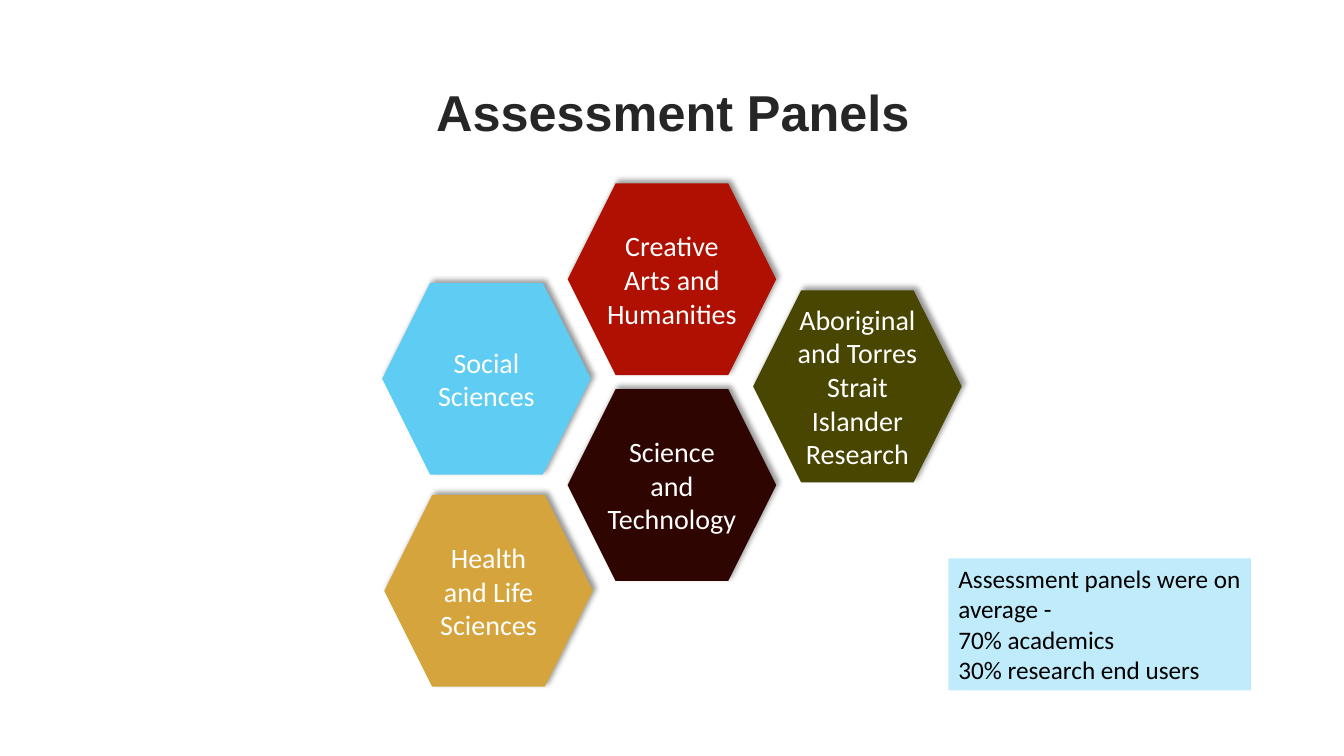
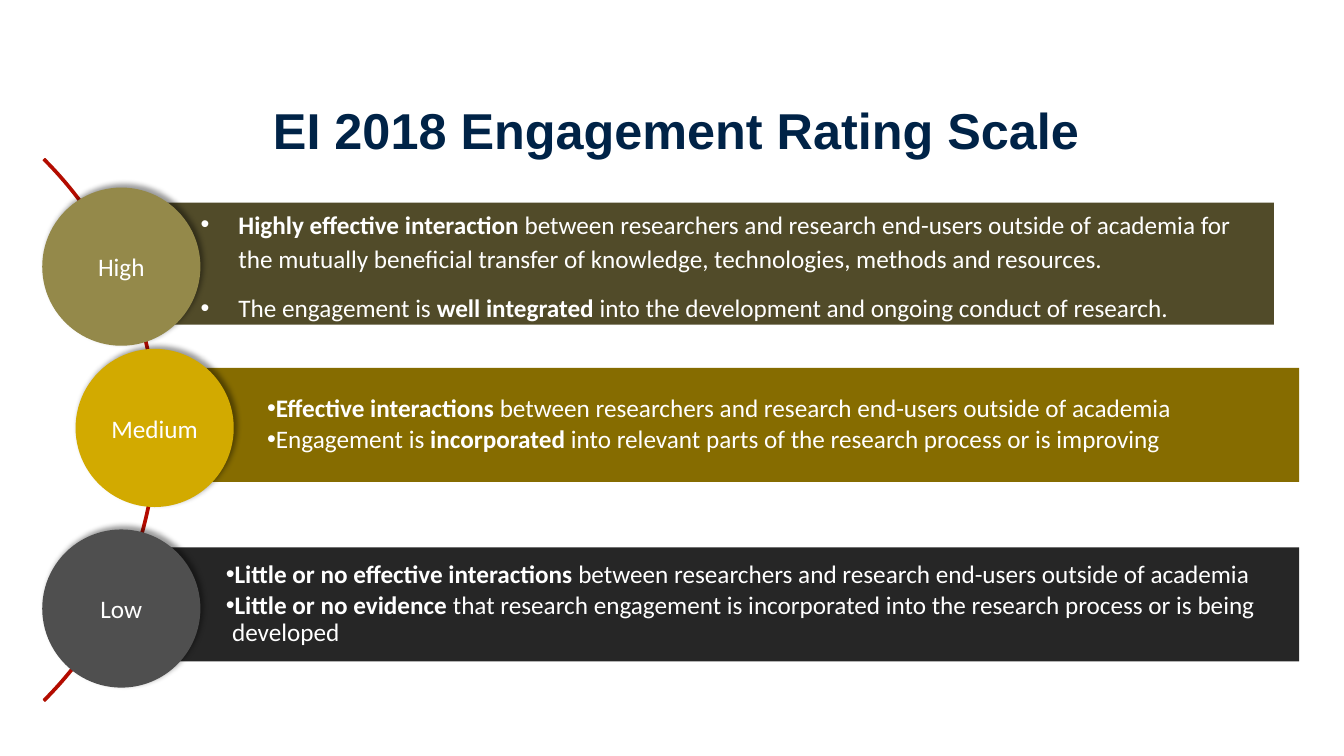
from lxml.etree import SubElement
from pptx import Presentation
from pptx.dml.color import RGBColor
from pptx.enum.shapes import MSO_SHAPE as Preset
from pptx.enum.text import MSO_ANCHOR as Anchor, MSO_AUTO_SIZE as AutoSize, PP_ALIGN as Align
from pptx.oxml.ns import qn
from pptx.util import Pt

WHITE = RGBColor(0xFF, 0xFF, 0xFF)
BLACK = RGBColor(0x00, 0x00, 0x00)
CHARCOAL = RGBColor(0x26, 0x26, 0x26)
NAVY = RGBColor(0x00, 0x23, 0x47)
SKY = RGBColor(0x5E, 0xCC, 0xF3)
PALE_SKY = RGBColor(0xBF, 0xEB, 0xFA)
MAROON = RGBColor(0x2E, 0x05, 0x00)
RED = RGBColor(0xB0, 0x10, 0x01)
BRIGHT_RED = RGBColor(0xC0, 0x00, 0x00)
SAND = RGBColor(0xD5, 0xA4, 0x3C)
OLIVE = RGBColor(0x49, 0x46, 0x01)
KHAKI = RGBColor(0x94, 0x89, 0x4A)
DARK_KHAKI = RGBColor(0x51, 0x4B, 0x29)
GOLD = RGBColor(0xD2, 0xAA, 0x00)
DARK_GOLD = RGBColor(0x86, 0x6C, 0x00)
GREY = RGBColor(0x4F, 0x4F, 0x4F)

TITLE_FONT, BODY_FONT = "Arial", "Calibri"
HEXAGON_SIZE = (149, 137)
CIRCLE_SIZE = (113, 113)

HEXAGONS = [
    ("Social Sciences", SKY, (273, 202), 7.2),
    ("Science and Technology", MAROON, (405.5, 278), 3),
    ("Creative Arts and Humanities", RED, (405.5, 131), 3),
    ("Health and Life Sciences", SAND, (274.5, 353.5), 7.2),
    ("Aboriginal and Torres Strait Islander Research", OLIVE, (538, 207.5), 7.2),
]

# Paragraph layout of a rating: hanging indent, line spacing, space after
LOOSE = (27, 1.15, 10)
TIGHT = (4.5, 0.9, 2.7)

# Label, circle colour and place, bar colour and bounds, layout, bullets of (text, bold)
RATINGS = [
    ("High", KHAKI, (30.2, 134), DARK_KHAKI, (78.5, 144.7, 831.5, 87.1), LOOSE, [
        [("Highly effective interaction ", True),
         ("between researchers and research end-users outside of academia for the mutually "
          "beneficial transfer of knowledge, technologies, methods and resources.", False)],
        [("The engagement is ", False), ("well integrated ", True),
         ("into the development and ongoing conduct of research.", False)],
    ]),
    ("Medium", GOLD, (54, 249.2), DARK_GOLD, (126, 262.8, 802, 81.4), TIGHT, [
        [("Effective interactions ", True),
         ("between researchers and research end-users outside of academia", False)],
        [("Engagement is ", False), ("incorporated", True),
         (" into relevant parts of the research process or is improving", False)],
    ]),
    ("Low", GREY, (30.2, 378.2), CHARCOAL, (96.5, 391, 831.5, 81.4), TIGHT, [
        [("Little or no effective interactions ", True),
         ("between researchers and research end-users outside of academia", False)],
        [("Little or no evidence ", True),
         ("that research engagement is incorporated into the research process or is being "
          "developed", False)],
    ]),
]


def add_span(para, text, size, color, bold=False, font=BODY_FONT):
    span = para.add_run()
    span.text = text
    span.font.name = font
    span.font.size = Pt(size)
    span.font.bold = bold
    span.font.color.rgb = color


def next_paragraph(frame, index):
    return frame.add_paragraph() if index else frame.paragraphs[0]


def add_filled(page, preset, bounds, fill):
    shape = page.shapes.add_shape(preset, *map(Pt, bounds))
    shape.shadow.inherit = False
    shape.fill.solid()
    shape.fill.fore_color.rgb = fill
    shape.line.fill.background()
    shape.text_frame.word_wrap = True
    return shape


def cast_shadow(shape):
    """Soft shadow towards the upper right."""
    effects = shape._element.spPr.find(qn("a:effectLst"))
    shadow = SubElement(effects, qn("a:outerShdw"), blurRad=str(Pt(4)), dist=str(Pt(3)),
                        dir="18900000", algn="bl", rotWithShape="0")
    color = SubElement(shadow, qn("a:srgbClr"), val=str(BLACK))
    SubElement(color, qn("a:alpha"), val="40000")


def add_title(page, text, bounds, color):
    box = page.shapes.add_textbox(*map(Pt, bounds))
    frame = box.text_frame
    frame.word_wrap = True
    frame.vertical_anchor = Anchor.MIDDLE
    para = frame.paragraphs[0]
    para.alignment = Align.CENTER
    para.line_spacing = 0.9
    add_span(para, text, 36, color, bold=True, font=TITLE_FONT)


def add_label(page, preset, bounds, fill, text, size, inset=7.2):
    """Shadowed shape with white centred text."""
    shape = add_filled(page, preset, bounds, fill)
    cast_shadow(shape)
    frame = shape.text_frame
    frame.margin_left = frame.margin_right = Pt(inset)
    frame.vertical_anchor = Anchor.MIDDLE
    para = frame.paragraphs[0]
    para.alignment = Align.CENTER
    add_span(para, text, size, WHITE)


def add_note(page, bounds, lines):
    frame = add_filled(page, Preset.RECTANGLE, bounds, PALE_SKY).text_frame
    frame.auto_size = AutoSize.SHAPE_TO_FIT_TEXT
    frame.vertical_anchor = Anchor.TOP
    for index, line in enumerate(lines):
        para = next_paragraph(frame, index)
        para.alignment = Align.LEFT
        add_span(para, line, 18, BLACK)


def set_bullet(para, indent):
    props = para._p.get_or_add_pPr()
    props.set("marL", str(Pt(indent)))
    props.set("indent", str(-Pt(indent)))
    SubElement(props, qn("a:buFont"), typeface=TITLE_FONT)
    SubElement(props, qn("a:buChar"), char="•")


def add_bar(page, bounds, fill, layout, bullets):
    indent, line_spacing, space_after = layout
    frame = add_filled(page, Preset.RECTANGLE, bounds, fill).text_frame
    frame.vertical_anchor = Anchor.MIDDLE
    frame.margin_left = Pt(64.8)
    frame.margin_right = frame.margin_top = frame.margin_bottom = Pt(3)
    for index, spans in enumerate(bullets):
        para = next_paragraph(frame, index)
        para.alignment = Align.LEFT
        para.line_spacing = line_spacing
        para.space_after = Pt(space_after)
        set_bullet(para, indent)
        for text, bold in spans:
            add_span(para, text, 18, WHITE, bold)


def add_spine(page):
    """Thin arc that links the rating circles."""
    arc = add_filled(page, Preset.BLOCK_ARC, (-435.6, 33.1, 548, 548), BRIGHT_RED)
    for index, value in enumerate((189, 27, 0.003)):
        arc.adjustments[index] = value
    arc.line.color.rgb = RED
    arc.line.width = Pt(1)


def build_panels(page):
    add_title(page, "Assessment Panels", (185.8, 59, 589.7, 46.8), CHARCOAL)
    for text, fill, place, inset in HEXAGONS:
        add_label(page, Preset.HEXAGON, place + HEXAGON_SIZE, fill, text, 20, inset)
    add_note(page, (677.5, 398.9, 216, 94.3), [
        "Assessment panels were on average -",
        "70% academics",
        "30% research end users",
    ])


def build_ratings(page):
    add_title(page, "EI 2018 Engagement Rating Scale", (90, 72, 786.2, 46.8), NAVY)
    add_spine(page)
    for label, circle_fill, place, bar_fill, bounds, layout, bullets in RATINGS:
        add_bar(page, bounds, bar_fill, layout, bullets)
        add_label(page, Preset.OVAL, place + CIRCLE_SIZE, circle_fill, label, 18)


def main():
    deck = Presentation()
    deck.slide_width, deck.slide_height = Pt(960), Pt(540)
    blank = deck.slide_layouts[6]
    for build in (build_panels, build_ratings):
        build(deck.slides.add_slide(blank))
    deck.save("out.pptx")


if __name__ == "__main__":
    main()
